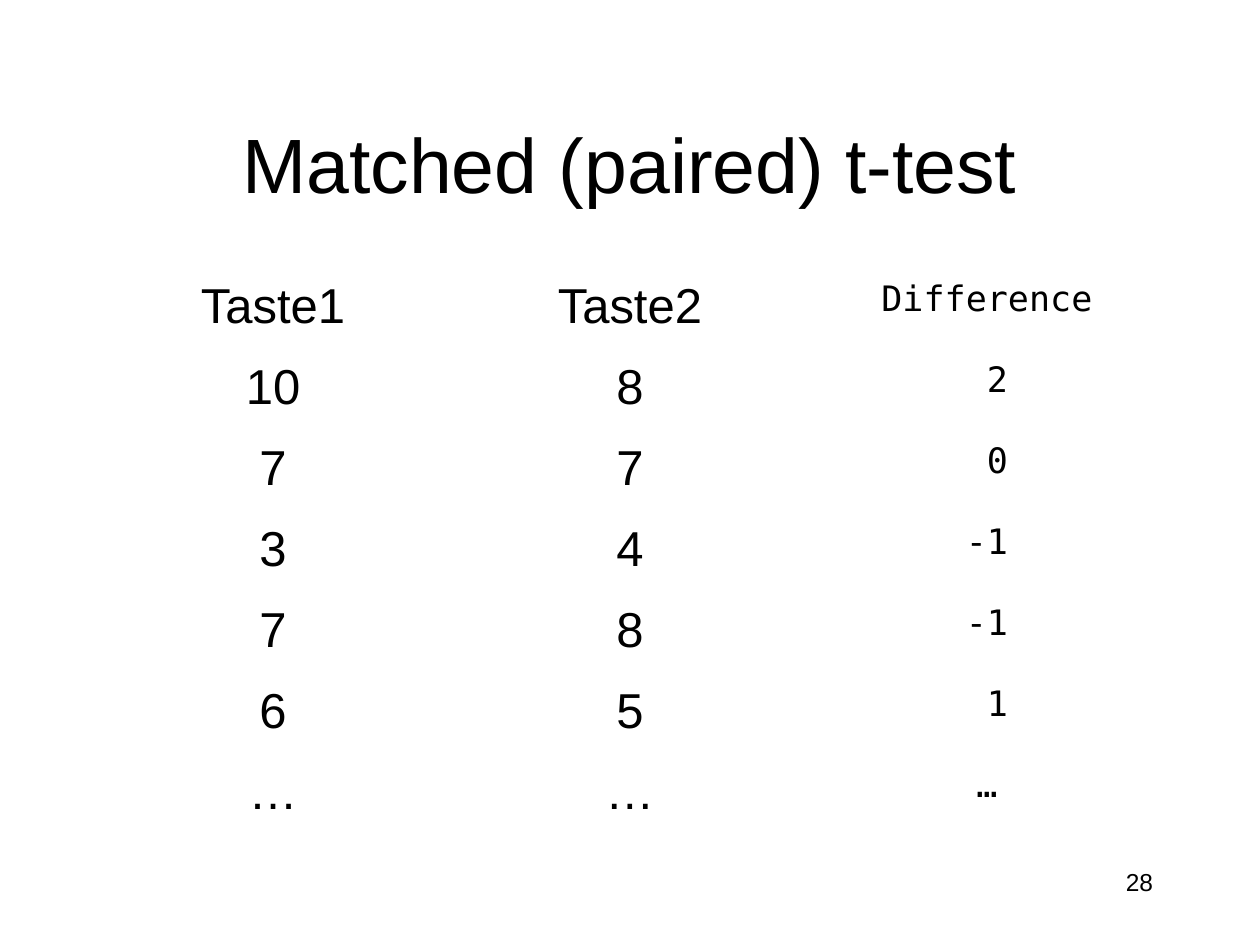
from pptx import Presentation
from pptx.dml.color import RGBColor as Rgb
from pptx.enum.text import MSO_ANCHOR as Anchor, PP_ALIGN as Align
from pptx.util import Pt

PX = 9525
HUES = {"ink": "000000", "page": "FFFFFF"}
SANS = "Arial"
MONO = "DejaVu Sans Mono"
ROWS = [
    ("Taste1", "Taste2", "Difference"),
    ("10", "8", " 2"),
    ("7", "7", " 0"),
    ("3", "4", "-1"),
    ("7", "8", "-1"),
    ("6", "5", " 1"),
    ("…", "…", "…"),
]
FONTS = [(SANS, 28), (SANS, 28), (MONO, 20)]


class Deck:
    def __init__(self, wide, high):
        self.show = Presentation()
        self.show.slide_width = wide * PX
        self.show.slide_height = high * PX
        self.slide = self.show.slides.add_slide(self.show.slide_layouts[5])
        fill = self.slide.background.fill
        fill.solid()
        fill.fore_color.rgb = Rgb.from_string(HUES["page"])

    def style(self, frame, text, face, size, align):
        frame.text = text
        para = frame.paragraphs[0]
        para.alignment = align
        para.font.name = face
        para.font.size = Pt(size)
        para.font.color.rgb = Rgb.from_string(HUES["ink"])

    def title(self, text, x, y, w, h):
        head = self.slide.shapes.title
        head.left, head.top, head.width, head.height = (n * PX for n in (x, y, w, h))
        head.text_frame.vertical_anchor = Anchor.MIDDLE
        self.style(head.text_frame, text, SANS, 44, Align.CENTER)

    def table(self, rows, fonts, x, y, w, h):
        box = (n * PX for n in (x, y, w, h))
        grid = self.slide.shapes.add_table(len(rows), len(fonts), *box).table
        grid.first_row = False
        grid.horz_banding = False
        for r, row in enumerate(rows):
            for c, (text, (face, size)) in enumerate(zip(row, fonts)):
                cell = grid.cell(r, c)
                cell.fill.background()
                self.style(cell.text_frame, text, face, size, Align.CENTER)

    def label(self, text, x, y, w, h):
        box = self.slide.shapes.add_textbox(*(n * PX for n in (x, y, w, h)))
        box.text_frame.word_wrap = True
        self.style(box.text_frame, text, SANS, 14, Align.RIGHT)


def main():
    deck = Deck(960, 720)
    deck.title("Matched (paired) t-test", 72, 64, 816, 120)
    deck.table(ROWS, FONTS, 72, 208, 816, 432)
    deck.label("28", 688, 656, 200, 48)
    deck.show.save("out.pptx")


if __name__ == "__main__":
    main()
